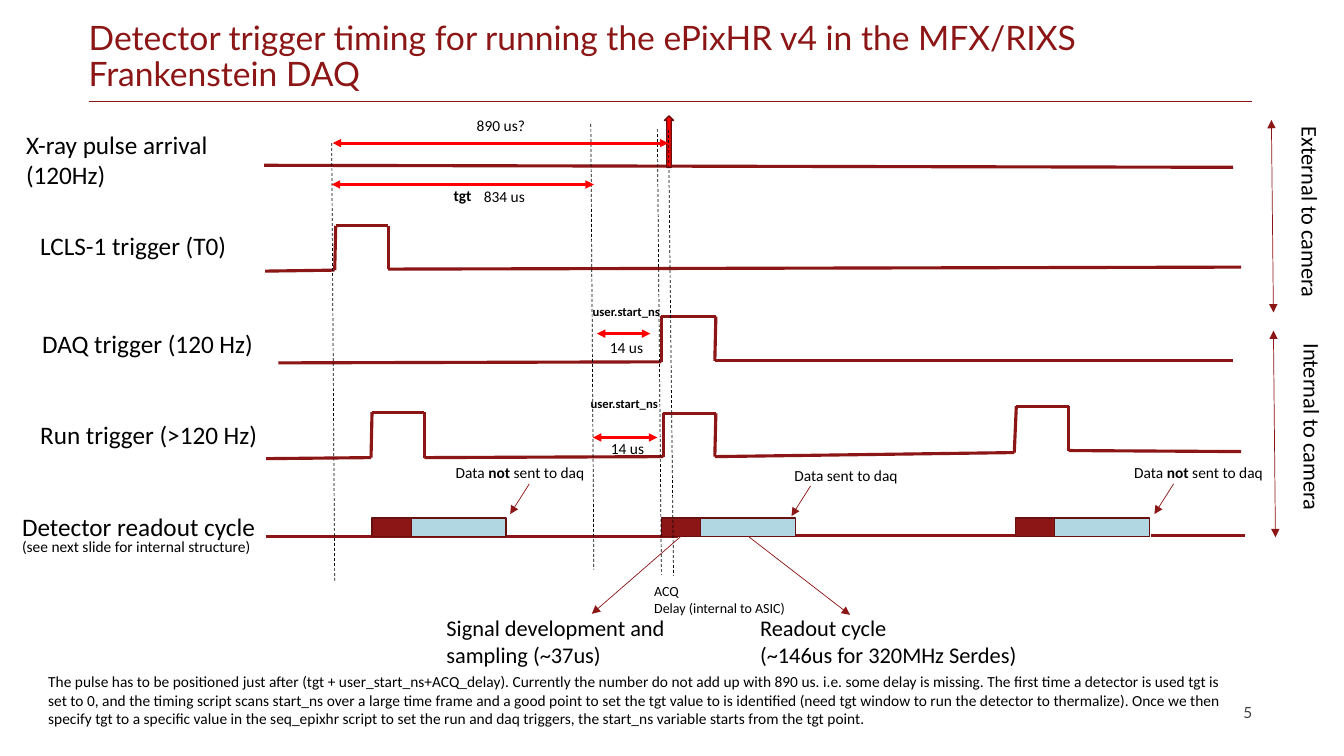
from itertools import pairwise

from pptx import Presentation
from pptx.dml.color import RGBColor
from pptx.enum.dml import MSO_LINE
from pptx.enum.shapes import MSO_CONNECTOR as Link, MSO_SHAPE as Form
from pptx.enum.text import MSO_ANCHOR as Anchor, MSO_AUTO_SIZE as Fit, PP_ALIGN as Align
from pptx.util import Pt
from lxml.etree import SubElement

PX = 9144
RED, DARK, EDGE, BLUE, HOT, INK = "8C1515", "8C1515", "681010", "B1D7E3", "FF0000", "000000"
DRAW = "{http://schemas.openxmlformats.org/drawingml/2006/main}"


def px(*nums):
    """Turn px lengths into EMU."""
    return [round(n * PX) for n in nums]


def tint(code):
    """Turn a hex string into a colour."""
    return RGBColor.from_string(code)


def line(slide, start, end, color=RED, width=2.25, heads=(), dash=False):
    """Draw a straight line with arrowheads at the named ends."""
    link = slide.shapes.add_connector(Link.STRAIGHT, *px(*start, *end))
    link.line.color.rgb = tint(color)
    link.line.width = Pt(width)
    if dash:
        link.line.dash_style = MSO_LINE.DASH
    for head in heads:
        SubElement(link.line._get_or_add_ln(), DRAW + head, type="triangle")
    SubElement(link._element.spPr, DRAW + "effectLst")
    return link


def label(slide, box, text, size, bold=False, turn=0):
    """Write a text box, with the parts between asterisks in bold."""
    shape = slide.shapes.add_textbox(*px(*box))
    shape.rotation = turn
    frame = shape.text_frame
    frame.word_wrap = True
    for i, row in enumerate(text.split("\n")):
        para = frame.add_paragraph() if i else frame.paragraphs[0]
        for j, part in enumerate(row.split("*")):
            run = para.add_run()
            run.text = part
            run.font.name = "Calibri"
            run.font.size = Pt(size)
            run.font.bold = bold or j % 2 == 1
            run.font.color.rgb = tint(INK)
    return frame


def solid(slide, form, box, fill):
    """Draw a filled shape with a thin dark edge."""
    shape = slide.shapes.add_shape(form, *px(*box))
    shape.shadow.inherit = False
    shape.fill.solid()
    shape.fill.fore_color.rgb = tint(fill)
    shape.line.color.rgb = tint(EDGE)
    shape.line.width = Pt(1)
    return shape


def header(slide, left, top, wide):
    """Set the title and the rule below it."""
    title = slide.shapes.title
    title.left, title.top, title.width, title.height = px(left, top, wide, 69)
    frame = title.text_frame
    frame.text = "Detector trigger timing for running the ePixHR v4 in the MFX/RIXS Frankenstein DAQ"
    frame.auto_size = Fit.NONE
    frame.vertical_anchor = Anchor.BOTTOM
    frame.margin_left = 0
    para = frame.paragraphs[0]
    para.alignment = Align.LEFT
    para.line_spacing = 0.9
    font = para.runs[0].font
    font.name, font.size = "Lato", Pt(24)
    font.color.rgb = tint(RED)
    line(slide, (left, top + 72), (left + wide, top + 72), width=0.75)


def trace(slide, left, top, name, shift, points):
    """Draw one named signal row around its base line."""
    dx, dy = shift
    label(slide, (left + dx, top + dy, 280, 40), name, 18)
    for a, b in pairwise(points):
        line(slide, (left + a[0], top + a[1]), (left + b[0], top + b[1]))


def block(slide, left, top):
    """Draw a sampling block followed by a readout block."""
    return (solid(slide, Form.RECTANGLE, (left, top, 39, 18), DARK),
            solid(slide, Form.RECTANGLE, (left + 39, top, 94, 18), BLUE))


def readout(slide, left, top):
    """Draw the readout row with its blocks and the two callouts."""
    label(slide, (left - 251, top - 30, 338, 61), "Detector readout cycle", 18)
    label(slide, (left - 251, top - 4, 338, 29), "(see next slide for internal structure)", 11)
    for x1, x2, dy in ((1, 409, 0), (448, 764, -1), (879, 972, -1)):
        line(slide, (left + x1, top + dy), (left + x2, top + dy))
    blocks = [block(slide, left + dx, top - 18) for dx in (106, 393, 744)]
    calls = (((170, 72, 255, 64), "Signal development and sampling (~37us)", (324, 77)),
             ((481, 72, 316, 64), "Readout cycle\n(~146us for 320MHz Serdes)", (580, 78)))
    for part, (box, text, tip) in zip(blocks[1], calls):
        label(slide, (left + box[0], top + box[1], *box[2:]), text, 16)
        arrow = line(slide, (left + 393, top), (left + tip[0], top + tip[1]),
                     width=0.5, heads=["tailEnd"])
        arrow.begin_connect(part, 2)


def note(slide, left, top, text, dx):
    """Write a note with an arrow down to its block."""
    label(slide, (left, top, 189, 29), text, 11)
    line(slide, (left + dx, top + 25), (left + dx - 19, top + 55), width=0.5, heads=["tailEnd"])


def span(slide, left, top, wide, marks):
    """Draw a red double arrow with its labels."""
    line(slide, (left, top), (left + wide, top), HOT, 2, ["headEnd", "tailEnd"])
    for dx, dy, width, text, size, bold in marks:
        label(slide, (left + dx, top + dy, width, 29), text, size, bold)


def side(slide, left, top, tall, text, drop):
    """Draw a vertical range with its turned label."""
    line(slide, (left, top), (left + 2, top + tall), width=0.5, heads=["headEnd", "tailEnd"])
    label(slide, (left - 72, top + drop, 221, 37), text, 16, turn=90)


def footer(slide, left, top, wide):
    """Write the closing remark and the page number."""
    label(slide, (left, top, wide, 66),
          "The pulse has to be positioned just after (tgt + user_start_ns+ACQ_delay). "
          "Currently the number do not add up with 890 us. i.e. some delay is missing. "
          "The first time a detector is used tgt is set to 0, and the timing script scans "
          "start_ns over a large time frame and a good point to set the tgt value to is "
          "identified (need tgt window to run the detector to thermalize). Once we then "
          "specify tgt to a specific value in the seq_epixhr script to set the run and daq "
          "triggers, the start_ns variable starts from the tgt point.", 11)
    frame = label(slide, (left + wide - 300, top + 25, 300, 40), "5", 11)
    frame.vertical_anchor = Anchor.MIDDLE
    frame.margin_right = 0
    para = frame.paragraphs[0]
    para.alignment = Align.RIGHT
    para.runs[0].font.name = "Lato"
    para.runs[0].font.color.rgb = tint("404040")


def timing(slide, left):
    """Draw the whole timing chart from its left edge."""
    trace(slide, left, 164, "X-ray pulse arrival (120Hz)", (-247, -41), [(-1, 0), (960, 2)])
    trace(slide, left, 267, "LCLS-1 trigger (T0)", (-233, -43),
          [(0, 2), (69, 1), (70, -43), (122, -43), (122, 0), (968, -2)])
    trace(slide, left, 358, "DAQ trigger (120 Hz)", (-231, -37),
          [(13, 2), (393, 1), (393, -44), (447, -44), (446, 0), (960, 0)])
    trace(slide, left, 453, "Run trigger (>120 Hz)", (-233, -42),
          [(1, 2), (105, 1), (106, -44), (158, -44), (158, 1), (395, 0), (395, -43),
           (447, -43), (446, 0), (743, -4), (745, -50), (797, -50), (797, -6), (968, -5)])
    readout(slide, left, 532)
    solid(slide, Form.UP_ARROW, (left + 396, 115, 9, 51), HOT)
    for x1, y1, x2, y2 in ((66, 142, 69, 576), (323, 123, 326, 565),
                           (389, 128, 393, 570), (400, 129, 405, 571)):
        line(slide, (left + x1, y1), (left + x2, y2), INK, 0.5, dash=True)
    span(slide, left + 67, 142, 333, [(133, -32, 101, "890 us?", 11, False)])
    span(slide, left + 66, 183, 260, [(111, -3, 46, "tgt", 11, True),
                                      (141, -2, 101, "834 us", 11, False)])
    span(slide, left + 329, 331, 53, [(-14, -34, 121, "user.start_ns", 9, True),
                                      (3, 0, 101, "14 us", 11, False)])
    span(slide, left + 325, 434, 64, [(-12, -46, 121, "user.start_ns", 9, True),
                                      (8, -3, 101, "14 us", 11, False)])
    label(slide, (left + 376, 573, 165, 44), "ACQ\nDelay (internal to ASIC)", 10)
    note(slide, left + 179, 455, "Data *not* sent to daq", 83)
    note(slide, left + 515, 457, "Data sent to daq", 26)
    note(slide, left + 852, 455, "Data *not* sent to daq", 49)


def main():
    """Build the slide and save it."""
    deck = Presentation()
    deck.slide_width, deck.slide_height = px(1333, 750)
    slide = deck.slides.add_slide(deck.slide_layouts[5])
    header(slide, 88, 29, 1154)
    timing(slide, 263)
    side(slide, 1261, 119, 191, "External to camera", 89)
    side(slide, 1263, 328, 205, "Internal to camera", 95)
    footer(slide, 38, 662, 1204)
    deck.save("out.pptx")


if __name__ == "__main__":
    main()
